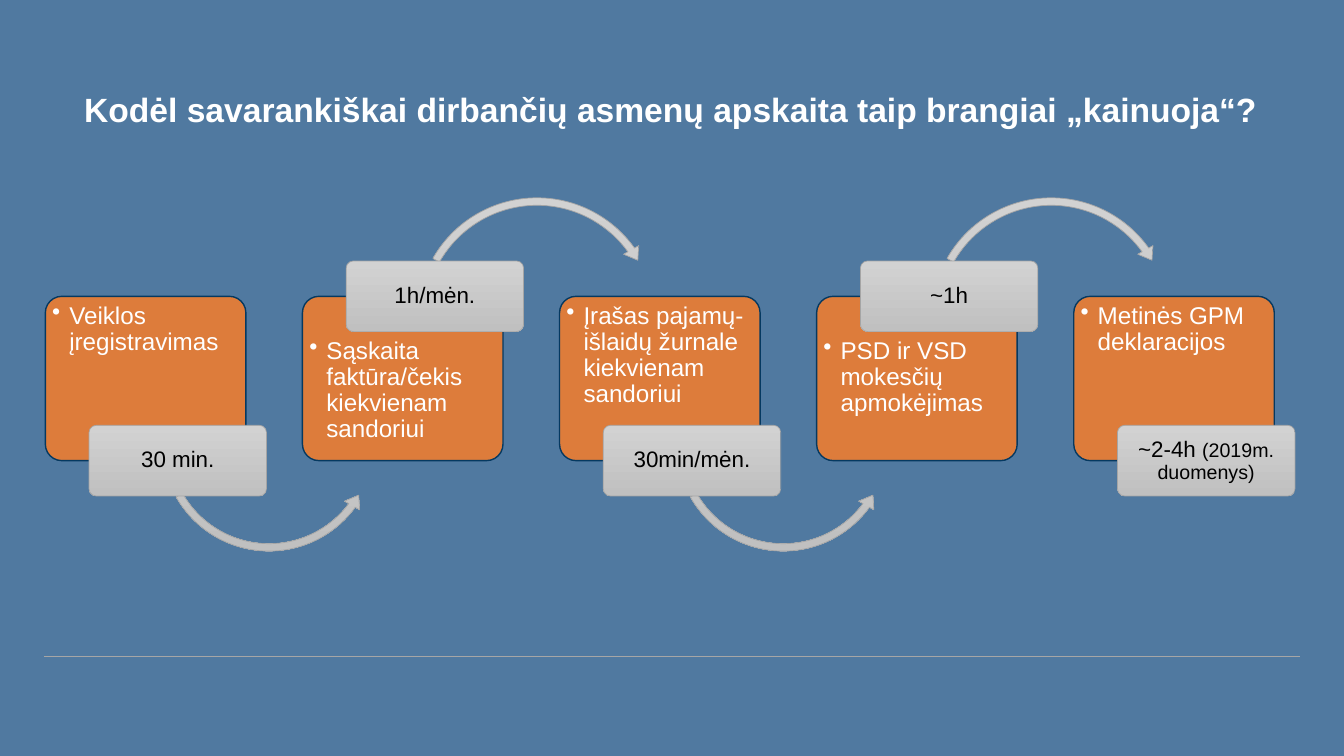
from dataclasses import dataclass

import pptx
import pptx.dml.color
import pptx.enum.shapes
import pptx.enum.text
import pptx.oxml
import pptx.oxml.ns
import pptx.util
from pptx.shapes.autoshape import Shape
from pptx.slide import Slide

SHAPES = pptx.enum.shapes.MSO_SHAPE
ALIGN = pptx.enum.text.PP_ALIGN
ANCHOR = pptx.enum.text.MSO_ANCHOR

SLIDE_WIDTH, SLIDE_HEIGHT = 13.33, 7.5
GRID_LEFT, GRID_TOP = 0.45, 2.94
COLUMN, ROW = 2.55, 1.63
BOX_COLUMNS = 0.78
BADGE_START, BADGE_COLUMNS, BADGE_ROWS = 0.17, 0.69, 0.43


@dataclass(frozen=True)
class Run:
    text: str
    size: float


@dataclass(frozen=True)
class Step:
    text: str
    badge: tuple[Run, ...]


@dataclass(frozen=True)
class Arrow:
    preset: pptx.enum.shapes.MSO_SHAPE
    column: float
    row: float
    columns: float
    adjustments: tuple[float, ...]


STEPS = (
    Step("Veiklos įregistravimas", (Run("30 min.", 16),)),
    Step("Sąskaita faktūra/čekis kiekvienam sandoriui", (Run("1h/mėn.", 16),)),
    Step("Įrašas pajamų-išlaidų žurnale kiekvienam sandoriui", (Run("30min/mėn.", 16),)),
    Step("PSD ir VSD mokesčių apmokėjimas", (Run("~1h", 16),)),
    Step("Metinės GPM deklaracijos", (Run("~2-4h ", 16), Run("(2019m. duomenys)", 14))),
)
LOWER_ARROW = Arrow(SHAPES.LEFT_CIRCULAR_ARROW, 0.435, 0.22, 0.87,
                    (0.033, 4.083, 21.839, 90.245, 0.039))
UPPER_ARROW = Arrow(SHAPES.CIRCULAR_ARROW, 0.427, -0.63, 0.97,
                    (0.03, 3.636, 194.609, 125.755, 0.035))


def color(value: str) -> pptx.dml.color.RGBColor:
    return pptx.dml.color.RGBColor.from_string(value)


def inches(*values: float) -> list[pptx.util.Length]:
    return [pptx.util.Inches(value) for value in values]


def grid_x(column: float) -> float:
    return GRID_LEFT + COLUMN * column


def grid_y(row: float) -> float:
    return GRID_TOP + ROW * row


def add_child(parent, tag: str, **attributes: str):
    child = pptx.oxml.parse_xml(f"<{tag} {pptx.oxml.ns.nsdecls('a')}/>")
    for name, value in attributes.items():
        child.set(name, value)
    parent.append(child)


def write(shape: Shape, runs: tuple[Run, ...], *, fill: str, insets: tuple[float, ...],
          align=ALIGN.CENTER, anchor=ANCHOR.MIDDLE, bold: bool = False,
          indent: float = 0) -> None:
    frame = shape.text_frame
    frame.word_wrap = True
    frame.vertical_anchor = anchor
    (frame.margin_left, frame.margin_top,
     frame.margin_right, frame.margin_bottom) = inches(*insets)
    para = frame.paragraphs[0]
    para.alignment = align
    para.line_spacing = 0.9
    if indent:
        properties = para._p.get_or_add_pPr()
        properties.set("marL", str(pptx.util.Inches(indent)))
        properties.set("indent", str(-pptx.util.Inches(indent)))
        add_child(properties, "a:buChar", char="•")
    for run in runs:
        span = para.add_run()
        span.text = run.text
        span.font.name = "Arial"
        span.font.size = pptx.util.Pt(run.size)
        span.font.bold = bold
        span.font.color.rgb = color(fill)


def add_shape(page: Slide, preset: pptx.enum.shapes.MSO_SHAPE, left: float, top: float,
              width: float, height: float, line: str, line_width: float,
              adjustments: tuple[float, ...]) -> Shape:
    shape = page.shapes.add_shape(preset, *inches(left, top, width, height))
    shape.shadow.inherit = False
    shape.line.color.rgb = color(line)
    shape.line.width = pptx.util.Pt(line_width)
    for index, value in enumerate(adjustments):
        shape.adjustments[index] = value
    return shape


def fill_silver(shape: Shape) -> None:
    shape.fill.gradient()
    shape.fill.gradient_angle = 270
    for stop, value in zip(shape.fill.gradient_stops, ("D2D2D2", "C0C0C0")):
        stop.color.rgb = color(value)


def draw_box(page: Slide, index: int, text: str, badge_above: bool) -> None:
    box = add_shape(page, SHAPES.ROUNDED_RECTANGLE, grid_x(index), grid_y(0),
                    COLUMN * BOX_COLUMNS, ROW, "053961", 1, (0.1,))
    box.fill.solid()
    box.fill.fore_color.rgb = color("ED7D31")
    add_child(box.fill._xPr.find(".//" + pptx.oxml.ns.qn("a:srgbClr")), "a:alpha", val="90000")
    insets = (0.02, 0.37, 0.02, 0.02) if badge_above else (0.02, 0.02, 0.02, 0.37)
    write(box, (Run(text, 17.3),), fill="FFFFFF", insets=insets,
          align=ALIGN.LEFT, anchor=ANCHOR.TOP, indent=0.17)


def draw_arrow(page: Slide, index: int, arrow: Arrow) -> None:
    side = COLUMN * arrow.columns
    shape = add_shape(page, arrow.preset, grid_x(index + arrow.column), grid_y(arrow.row),
                      side, side, "A5A5A5", 0.5, arrow.adjustments)
    fill_silver(shape)


def draw_badge(page: Slide, index: int, runs: tuple[Run, ...], above: bool) -> None:
    edge = 0 if above else 1
    badge = add_shape(page, SHAPES.ROUNDED_RECTANGLE, grid_x(index + BADGE_START),
                      grid_y(edge - BADGE_ROWS / 2), COLUMN * BADGE_COLUMNS,
                      ROW * BADGE_ROWS, "A5A5A5", 0.5, (0.1,))
    fill_silver(badge)
    write(badge, runs, fill="000000", insets=(0.04, 0.03, 0.04, 0.03))


def draw_rule(page: Slide) -> None:
    left, right, level = SLIDE_WIDTH * 0.033, SLIDE_WIDTH * 0.967, SLIDE_HEIGHT * 0.868
    rule = page.shapes.add_connector(pptx.enum.shapes.MSO_CONNECTOR.STRAIGHT,
                                     *inches(left, level, right, level))
    rule.line.color.rgb = color("A6A6A6")
    rule.line.width = pptx.util.Pt(0.5)
    add_child(rule._element.spPr, "a:effectLst")


def draw_title(page: Slide) -> None:
    title = page.shapes.add_textbox(*inches(SLIDE_WIDTH * 0.033, SLIDE_HEIGHT * 0.113,
                                            SLIDE_WIDTH * 0.932, SLIDE_HEIGHT * 0.076))
    text = "Kodėl savarankiškai dirbančių asmenų apskaita taip brangiai „kainuoja“?"
    write(title, (Run(text, 24),), fill="FFFFFF", insets=(0.13,) * 4,
          anchor=ANCHOR.BOTTOM, bold=True)


def main() -> None:
    deck = pptx.Presentation()
    deck.slide_width, deck.slide_height = inches(SLIDE_WIDTH, SLIDE_HEIGHT)
    page = deck.slides.add_slide(deck.slide_layouts[6])
    page.background.fill.solid()
    page.background.fill.fore_color.rgb = color("5079A0")
    draw_rule(page)
    draw_title(page)
    for index, step in enumerate(STEPS):
        above = index % 2 == 1
        draw_box(page, index, step.text, above)
        if index < len(STEPS) - 1:
            draw_arrow(page, index, UPPER_ARROW if above else LOWER_ARROW)
        draw_badge(page, index, step.badge, above)
    deck.save("out.pptx")


if __name__ == "__main__":
    main()
